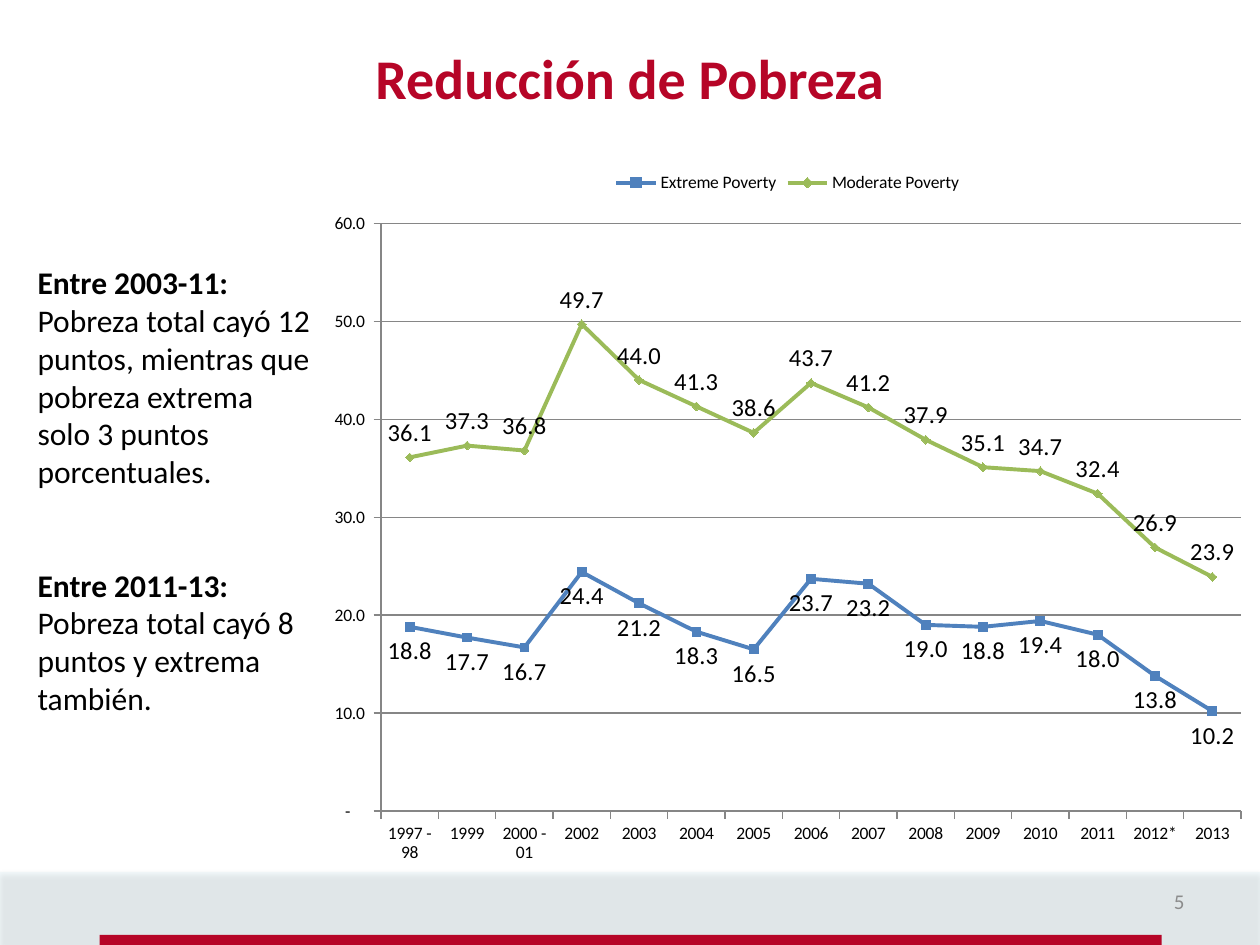
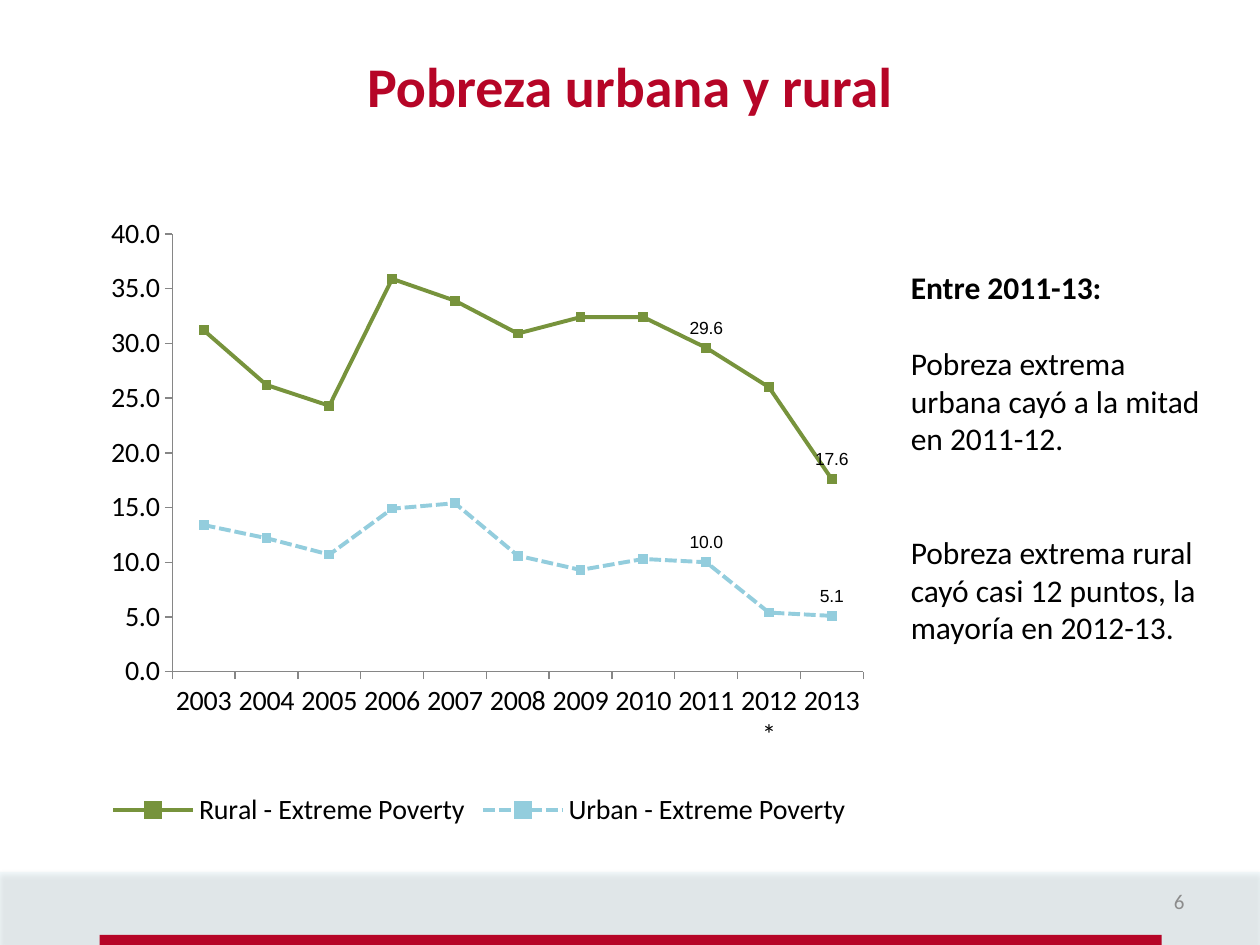
from dataclasses import dataclass
from typing import Optional

from lxml import etree
from pptx import Presentation
from pptx import util as u
from pptx.chart import data as cd
from pptx.dml import color
from pptx.enum import chart as ch
from pptx.enum import dml, shapes, text
from pptx.oxml import ns

FONT = "Calibri"
LABEL_FONT = "Arial"
COLORS = {
    "accent": "B60527",
    "band": "DBEEF4",
    "shadow": "000000",
    "text": "000000",
    "number": "8C8C8C",
    "axis": "868686",
    "extreme": "4F81BD",
    "moderate": "9BBB59",
    "rural": "77933C",
    "urban": "93CDDD",
}
ACCOUNTING = '_ * #,##0.0_ ;_ * \\-#,##0.0_ ;_ * "-"??_'
FINDING_LINE = 21.6


@dataclass(frozen=True)
class Box:
    left: float
    top: float
    width: float
    height: float

    def emu(self) -> tuple:
        return tuple(u.Inches(v) for v in (self.left, self.top, self.width, self.height))


@dataclass(frozen=True)
class Finding:
    heading: str
    body: str
    blank_lines: int = 0


@dataclass(frozen=True)
class Line:
    name: str
    values: tuple
    color: str
    marker: ch.XL_MARKER_STYLE = ch.XL_MARKER_STYLE.SQUARE
    dashed: bool = False
    label_pos: ch.XL_LABEL_POSITION = ch.XL_LABEL_POSITION.ABOVE
    labelled_points: Optional[tuple] = None


@dataclass(frozen=True)
class LineChart:
    box: Box
    plot: Box
    categories: tuple
    lines: tuple
    size: int
    number_format: str
    top_value: int
    step: int
    gridlines: bool
    legend: ch.XL_LEGEND_POSITION
    overlay: bool


@dataclass(frozen=True)
class Page:
    number: int
    title: str
    title_box: Box
    findings_box: Box
    findings: tuple
    chart: LineChart


def rgb(name: str) -> color.RGBColor:
    return color.RGBColor.from_string(COLORS[name])


def style(font, size: float, name: str = "text", bold: bool = False, face: str = FONT) -> None:
    font.name, font.size, font.bold = face, u.Pt(size), bold
    font.color.rgb = rgb(name)


def add_rect(s, box: Box, fill: str):
    sp = s.shapes.add_shape(shapes.MSO_SHAPE.RECTANGLE, *box.emu())
    sp.fill.solid()
    sp.fill.fore_color.rgb = rgb(fill)
    sp.line.fill.background()
    sp.shadow.inherit = False
    return sp


def add_band(s) -> None:
    sp = add_rect(s, Box(0, 6.92, 10, 0.58), "band")
    props = sp.element.spPr
    tint = props.find(ns.qn("a:solidFill")).find(ns.qn("a:srgbClr"))
    etree.SubElement(tint, ns.qn("a:alpha"), val="32000")
    shadow = etree.SubElement(
        props.find(ns.qn("a:effectLst")), ns.qn("a:outerShdw"),
        blurRad=str(u.Pt(3.1)), dist=str(u.Pt(1.8)), dir="5400000", rotWithShape="0")
    shade = etree.SubElement(shadow, ns.qn("a:srgbClr"), val=COLORS["shadow"])
    etree.SubElement(shade, ns.qn("a:alpha"), val="35000")


def add_text(s, box: Box, anchor=text.MSO_ANCHOR.TOP):
    tf = s.shapes.add_textbox(*box.emu()).text_frame
    tf.word_wrap = True
    tf.vertical_anchor = anchor
    return tf


def add_label(s, box: Box, words: str, align, size: float, name: str, bold: bool = False) -> None:
    tf = add_text(s, box, text.MSO_ANCHOR.MIDDLE)
    tf.text = words
    p = tf.paragraphs[0]
    p.alignment = align
    style(p.runs[0].font, size, name, bold)


def add_findings(s, box: Box, findings: tuple) -> None:
    tf = add_text(s, box)
    for i, finding in enumerate(findings):
        p = tf.add_paragraph() if i else tf.paragraphs[0]
        if finding.blank_lines:
            p.space_before = u.Pt(finding.blank_lines * FINDING_LINE)
        for words, bold in ((finding.heading, True), (finding.body, False)):
            if words:
                r = p.add_run()
                r.text = words
                style(r.font, 18, bold=bold)


def place_plot(chart, plot: Box) -> None:
    area = chart.element.chart.plotArea
    for old in area.findall(ns.qn("c:layout")):
        area.remove(old)
    layout = etree.Element(ns.qn("c:layout"))
    area.insert(0, layout)
    manual = etree.SubElement(layout, ns.qn("c:manualLayout"))
    settings = (("layoutTarget", "inner"), ("xMode", "edge"), ("yMode", "edge"),
                ("x", plot.left), ("y", plot.top), ("w", plot.width), ("h", plot.height))
    for tag, value in settings:
        etree.SubElement(manual, ns.qn(f"c:{tag}"), val=str(value))


def style_axis_line(line) -> None:
    line.color.rgb = rgb("axis")
    line.width = u.Pt(0.75)


def style_line(series, line: Line, number_format: str) -> None:
    series.smooth = False
    series.format.line.color.rgb = rgb(line.color)
    series.format.line.width = u.Pt(2.25)
    if line.dashed:
        series.format.line.dash_style = dml.MSO_LINE.SQUARE_DOT
    series.marker.style = line.marker
    series.marker.size = 5
    series.marker.format.fill.solid()
    series.marker.format.fill.fore_color.rgb = rgb(line.color)
    series.marker.format.line.color.rgb = rgb(line.color)
    if line.labelled_points is None:
        labels = series.data_labels
        labels.show_value = True
        labels.position = line.label_pos
        labels.number_format = number_format
        labels.number_format_is_linked = False
        style(labels.font, 14)
        return
    for i in line.labelled_points:
        label = series.points[i].data_label
        style(label.font, 10, face=LABEL_FONT)
        label.position = line.label_pos


def add_line_chart(s, design: LineChart) -> None:
    data = cd.CategoryChartData(number_format="0.0")
    data.categories = design.categories
    for line in design.lines:
        data.add_series(line.name, line.values)
    chart = s.shapes.add_chart(ch.XL_CHART_TYPE.LINE_MARKERS, *design.box.emu(), data).chart
    style(chart.font, design.size)
    chart.has_title = False
    chart.has_legend = True
    chart.legend.position = design.legend
    chart.legend.include_in_layout = design.overlay
    style(chart.legend.font, design.size)
    chart.plots[0].vary_by_categories = False
    for axis in (chart.category_axis, chart.value_axis):
        axis.major_tick_mark = ch.XL_TICK_MARK.OUTSIDE
        axis.minor_tick_mark = ch.XL_TICK_MARK.NONE
        style_axis_line(axis.format.line)
        style(axis.tick_labels.font, design.size)
    values = chart.value_axis
    values.minimum_scale, values.maximum_scale = 0, design.top_value
    values.major_unit = design.step
    values.has_major_gridlines = design.gridlines
    if design.gridlines:
        style_axis_line(values.major_gridlines.format.line)
    values.tick_labels.number_format = design.number_format
    values.tick_labels.number_format_is_linked = False
    for series, line in zip(chart.plots[0].series, design.lines):
        style_line(series, line, design.number_format)
    place_plot(chart, design.plot)


def add_page(prs, page: Page) -> None:
    s = prs.slides.add_slide(prs.slide_layouts[6])
    add_band(s)
    add_rect(s, Box(0.79, 7.42, 8.43, 0.08), "accent")
    add_label(s, Box(7.17, 6.95, 2.33, 0.4), str(page.number), text.PP_ALIGN.RIGHT, 12, "number")
    add_label(s, page.title_box, page.title, text.PP_ALIGN.CENTER, 32, "accent", True)
    add_findings(s, page.findings_box, page.findings)
    add_line_chart(s, page.chart)


YEARS = tuple(str(y) if y != 2012 else "2012*" for y in range(2002, 2014))

REDUCTION = Page(
    5, "Reducción de Pobreza", Box(0.5, 0, 9, 1.23), Box(0.2, 2.04, 2.36, 3.74),
    (Finding("Entre 2003-11:", " Pobreza total cayó 12 puntos, mientras que pobreza extrema "
             "solo 3 puntos porcentuales."),
     Finding("Entre 2011-13:", " Pobreza total cayó 8 puntos y extrema también.", 2)),
    LineChart(
        Box(2.5, 1.26, 7.5, 5.69), Box(0.07, 0.09, 0.91, 0.82),
        ("1997 - 98", "1999", "2000 - 01") + YEARS,
        (Line("Extreme Poverty",
              (18.8, 17.7, 16.7, 24.4, 21.2, 18.3, 16.5, 23.7, 23.2, 19, 18.8, 19.4, 18,
               13.8, 10.2),
              "extreme", label_pos=ch.XL_LABEL_POSITION.BELOW),
         Line("Moderate Poverty",
              (36.1, 37.3, 36.8, 49.7, 44, 41.3, 38.6, 43.7, 41.2, 37.9, 35.1, 34.7, 32.4,
               26.9, 23.9),
              "moderate", ch.XL_MARKER_STYLE.DIAMOND)),
        10, ACCOUNTING, 60, 10, True, ch.XL_LEGEND_POSITION.TOP, False))

URBAN_RURAL = Page(
    6, "Pobreza urbana y rural", Box(0.5, 0.05, 9, 1.25), Box(7.13, 2.08, 2.52, 3.13),
    (Finding("Entre 2011-13:", ""),
     Finding("", "Pobreza extrema urbana cayó a la mitad en 2011-12.", 1),
     Finding("", "Pobreza extrema rural cayó casi 12 puntos, la mayoría en 2012-13.", 2)),
    LineChart(
        Box(0.42, 1.5, 6.77, 5.11), Box(0.14, 0.07, 0.81, 0.68), YEARS[1:],
        (Line("Rural - Extreme Poverty",
              (31.2, 26.2, 24.3, 35.9, 33.9, 30.9, 32.4, 32.4, 29.6, 26, 17.6),
              "rural", labelled_points=(8, 10)),
         Line("Urban - Extreme Poverty",
              (13.4, 12.2, 10.7, 14.9, 15.4, 10.6, 9.3, 10.3, 10.0, 5.4, 5.1),
              "urban", dashed=True, labelled_points=(8, 10))),
        16, "0.0", 40, 5, False, ch.XL_LEGEND_POSITION.BOTTOM, True))


def main() -> None:
    prs = Presentation()
    prs.slide_width, prs.slide_height = u.Inches(10), u.Inches(7.5)
    for page in (REDUCTION, URBAN_RURAL):
        add_page(prs, page)
    prs.save("out.pptx")


if __name__ == "__main__":
    main()
